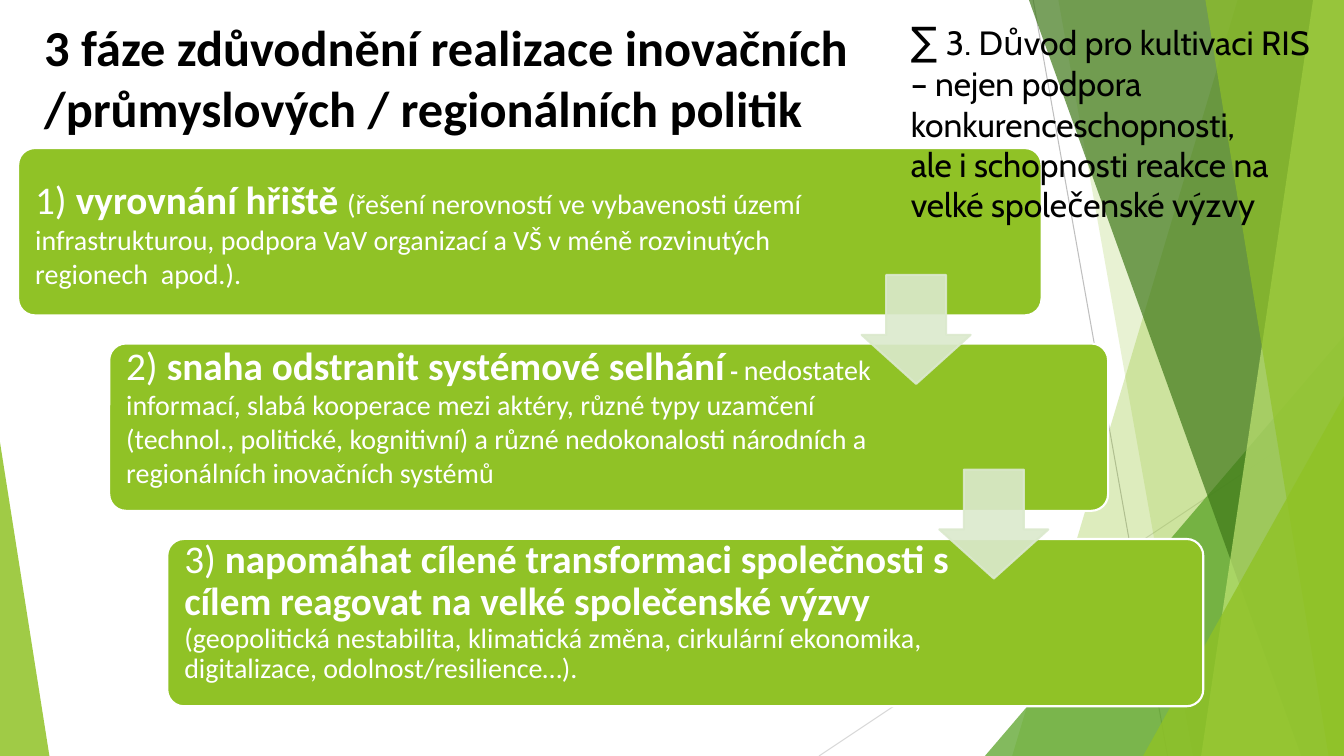
from lxml.etree import SubElement
from pptx import Presentation
from pptx.dml.color import RGBColor
from pptx.enum.shapes import MSO_CONNECTOR, MSO_SHAPE
from pptx.oxml.ns import qn
from pptx.util import Pt

WIDTH, HEIGHT = 960, 540
GREEN, ARROW_GREEN = "90C226", "DBE9CD"


def color(value):
    return RGBColor.from_string(value)


class SlideBuilder:
    """Hold the style and draw each kind of element on the current slide."""

    font = "Calibri"

    def __init__(self, slide):
        self.slide = slide

    def paint(self, fill_format, fill, alpha):
        fill_format.solid()
        fill_format.fore_color.rgb = color(fill)
        if alpha < 100:
            solid = fill_format._xPr.find(qn("a:solidFill"))
            SubElement(solid[0], qn("a:alpha"), val=str(alpha * 1000))

    def style(self, shape, fill, alpha=100, line=None):
        shape.shadow.inherit = False
        self.paint(shape.fill, fill, alpha)
        if line:
            shape.line.width = Pt(1.5)
            self.paint(shape.line.fill, line, alpha)
        else:
            shape.line.fill.background()

    def line(self, start, end, line_color):
        connector = self.slide.shapes.add_connector(
            MSO_CONNECTOR.STRAIGHT, *(Pt(value) for value in start + end))
        connector.line.color.rgb = color(line_color)
        connector.line.width = Pt(0.75)
        SubElement(connector._element.spPr, qn("a:effectLst"))

    def slanted_band(self, top_x, bottom_x, fill, alpha):
        builder = self.slide.shapes.build_freeform(Pt(top_x), 0)
        corners = [(WIDTH, 0), (WIDTH, HEIGHT), (bottom_x, HEIGHT)]
        builder.add_line_segments([(Pt(x), Pt(y)) for x, y in corners])
        self.style(builder.convert_to_shape(), fill, alpha)

    def preset(self, kind, left, top, width, height, adjustments, fill, alpha=100, line=None):
        shape = self.slide.shapes.add_shape(kind, Pt(left), Pt(top), Pt(width), Pt(height))
        for index, value in enumerate(adjustments):
            shape.adjustments[index] = value
        self.style(shape, fill, alpha, line)

    def corner(self, left, top, width, apex, fill, alpha):
        self.preset(MSO_SHAPE.ISOSCELES_TRIANGLE, left, top, width, HEIGHT - top,
                    [apex], fill, alpha)

    def text(self, left, top, width, height, paragraphs, text_color, font=None,
             side_inset=7.2, top_inset=3.6, spacing=1.0):
        box = self.slide.shapes.add_textbox(Pt(left), Pt(top), Pt(width), Pt(height))
        frame = box.text_frame
        frame.word_wrap = True
        frame.margin_left = frame.margin_right = Pt(side_inset)
        frame.margin_top = frame.margin_bottom = Pt(top_inset)
        frame.text = "\n".join("" for _ in paragraphs)
        for paragraph, runs in zip(frame.paragraphs, paragraphs):
            paragraph.line_spacing = spacing
            for content, size, bold in runs:
                run = paragraph.add_run()
                run.text = content
                run.font.size = Pt(size)
                run.font.bold = bold
                run.font.name = font or self.font
                run.font.color.rgb = color(text_color)

    def card(self, left, top, width, text_top, text_width, runs, spacing):
        self.preset(MSO_SHAPE.ROUNDED_RECTANGLE, left, top, width, 119.5, [0.1],
                    GREEN, line="FFFFFF")
        self.text(left + 3.5, text_top, text_width, 112, [runs], "FFFFFF",
                  side_inset=8.64, top_inset=0, spacing=spacing)

    def arrow(self, left, top):
        self.preset(MSO_SHAPE.DOWN_ARROW, left, top, 77.8, 77.8, [0.55, 0.45],
                    ARROW_GREEN, 90, ARROW_GREEN)


def draw_background(builder):
    builder.line((738, 0), (834, HEIGHT), "BFBFBF")
    builder.line((WIDTH, 290), (585, HEIGHT), "D9D9D9")
    builder.slanted_band(884, 723, GREEN, 30)
    builder.slanted_band(756, 852, GREEN, 20)
    builder.corner(703.5, 240, 256.5, 1, "54A021", 72)
    builder.slanted_band(735, 929.5, "3F7819", 70)
    builder.slanted_band(938, 858, "C0E474", 70)
    builder.slanted_band(861, 949, GREEN, 65)
    builder.corner(816.5, 283, 143.5, 1, GREEN, 80)
    builder.corner(0, 316, 35.3, 0, GREEN, 85)


def main():
    presentation = Presentation()
    presentation.slide_width, presentation.slide_height = Pt(WIDTH), Pt(HEIGHT)
    builder = SlideBuilder(presentation.slides.add_slide(presentation.slide_layouts[6]))
    draw_background(builder)
    title = "3 fáze zdůvodnění realizace inovačních /průmyslových / regionálních politik"
    builder.text(24.5, 8, 720, 96, [[(title, 36, True)]], "000000")

    phases = [
        (13, 731, 125.5, 582.5, 1.0, [
            ("1) ", 28, False), ("vyrovnání hřiště ", 28, True),
            ("(řešení nerovností ve vybavenosti území infrastrukturou, podpora VaV "
             "organizací a VŠ v méně rozvinutých regionech  apod.).", 20, False)]),
        (78, 713.5, 243.5, 555, 1.0, [
            ("2) ", 28, False), ("snaha odstranit systémové selhání", 28, True),
            (" - ", 18, True),
            ("nedostatek informací, slabá kooperace mezi aktéry, různé typy uzamčení "
             "(technol., politické, kognitivní) a různé nedokonalosti národních a "
             "regionálních inovačních systémů", 20, False)]),
        (119.5, 740, 385.5, 576, 0.9, [
            ("3) ", 28, False),
            ("napomáhat cílené transformaci společnosti s cílem reagovat na velké "
             "společenské výzvy ", 28, True),
            ("(geopolitická nestabilita, klimatická změna, cirkulární ekonomika, "
             "digitalizace, odolnost/resilience…).", 20, False)]),
    ]
    for index, (left, width, text_top, text_width, spacing, runs) in enumerate(phases):
        builder.card(left, 105.8 + 139.6 * index, width, text_top, text_width, runs, spacing)
    for index, left in enumerate((615.5, 671)):
        builder.arrow(left, 196.4 + 139 * index)

    builder.text(643.5, 8, 304, 158, [
        [("∑ ", 28, False),
         ("3. Důvod pro kultivaci RIS – nejen podpora konkurenceschopnosti,", 24, False)],
        [("ale i schopnosti reakce na velké společenské výzvy", 24, False)],
    ], "000000", "Cabin")
    presentation.save("out.pptx")


if __name__ == "__main__":
    main()
